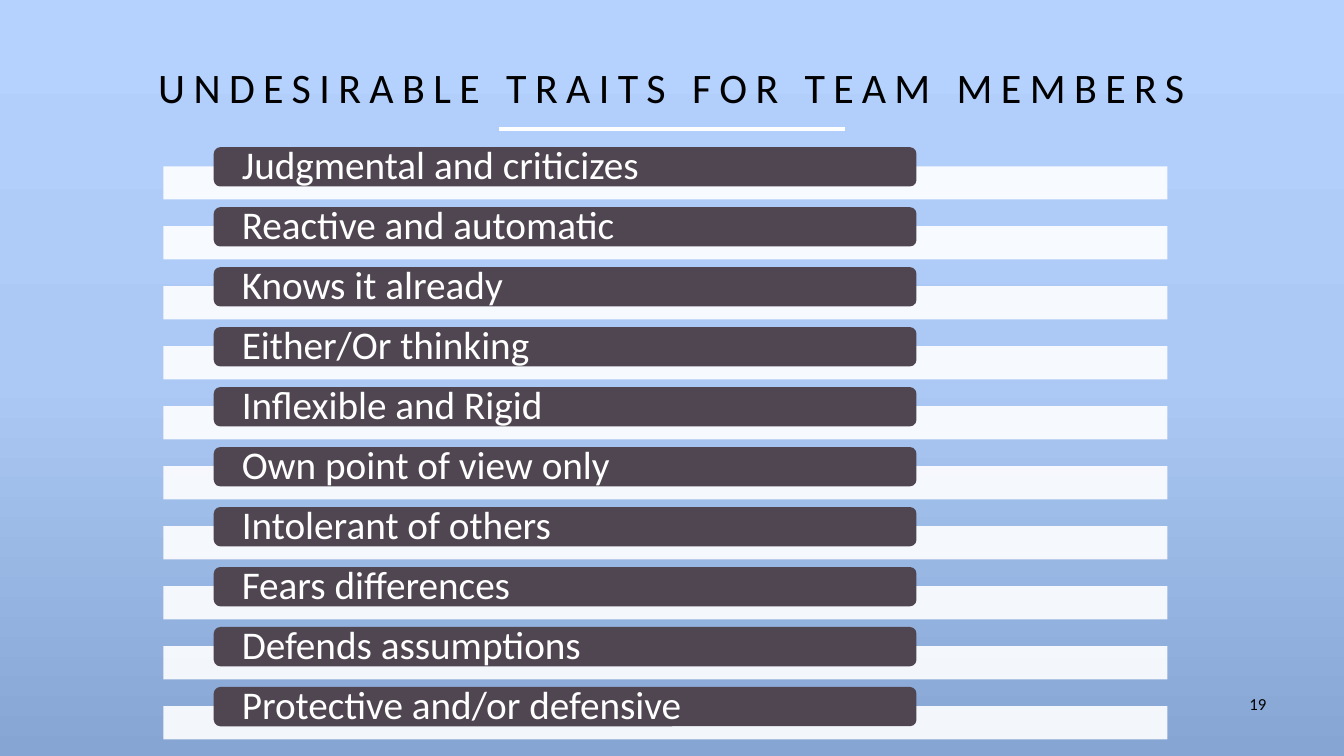
from copy import deepcopy

from pptx import Presentation
from pptx.dml.color import RGBColor
from pptx.enum.shapes import MSO_CONNECTOR, MSO_SHAPE
from pptx.enum.text import MSO_ANCHOR, MSO_AUTO_SIZE, PP_ALIGN
from pptx.oxml.ns import qn
from pptx.oxml.xmlchemy import OxmlElement
from pptx.util import Inches, Pt

THEME = {
    "font": "Calibri",
    "black": RGBColor.from_string("000000"),
    "white": RGBColor.from_string("FFFFFF"),
    "plum": RGBColor.from_string("504652"),
    "sky": [(0, "B5D1FD"), (0.5, "ACC9F5"), (1, "86A5D2")],
    "title_size": Pt(30),
    "trait_size": Pt(28),
    "number_size": Pt(12),
}

TRAITS = [
    "Judgmental and criticizes",
    "Reactive and automatic",
    "Knows it already",
    "Either/Or thinking",
    "Inflexible and Rigid",
    "Own point of view only",
    "Intolerant of others",
    "Fears differences",
    "Defends assumptions",
    "Protective and/or defensive",
]
FIRST_TOP, ROW_STEP = 1.46, 0.595


def write_text(shape, text, size, color, align, margins, line_spacing=1.0,
               anchor=MSO_ANCHOR.MIDDLE):
    frame = shape.text_frame
    side, edge = (Inches(margin) for margin in margins)
    frame_format = {
        "word_wrap": True, "auto_size": MSO_AUTO_SIZE.NONE, "vertical_anchor": anchor,
        "margin_left": side, "margin_right": side,
        "margin_top": edge, "margin_bottom": edge,
    }
    for name, value in frame_format.items():
        setattr(frame, name, value)
    paragraph = frame.paragraphs[0]
    paragraph.alignment = align
    paragraph.line_spacing = line_spacing
    run = paragraph.add_run()
    run.text = text
    for name, value in {"name": THEME["font"], "size": size}.items():
        setattr(run.font, name, value)
    run.font.color.rgb = color
    return run


def add_bar(slide, kind, left, top, width, height, color):
    shape = slide.shapes.add_shape(
        kind, Inches(left), Inches(top), Inches(width), Inches(height))
    shape.shadow.inherit = False
    shape.fill.solid()
    shape.fill.fore_color.rgb = color
    shape.line.fill.background()
    return shape


presentation = Presentation()
presentation.slide_width = Inches(13.33)
presentation.slide_height = Inches(7.5)
slide = presentation.slides.add_slide(presentation.slide_layouts[5])

# Background: three-stop gradient from top to bottom
background = slide.background.fill
background.gradient()
background.gradient_angle = 270
stop_list = slide.element.find(".//" + qn("a:gsLst"))
stop_list.append(deepcopy(stop_list[-1]))
for stop, (position, color) in zip(background.gradient_stops, THEME["sky"]):
    stop.position = position
    stop.color.rgb = RGBColor.from_string(color)

# Title and the rule below it
title = slide.shapes.title
title_place = {"left": 0, "top": 0.53, "width": 13.33, "height": 0.73}
for name, value in title_place.items():
    setattr(title, name, Inches(value))
title_run = write_text(title, "UNDESIRABLE TRAITS FOR TEAM MEMBERS", THEME["title_size"],
                       THEME["black"], PP_ALIGN.CENTER, (0.1, 0.05), 0.9)
title_run.font.element.set("spc", "600") if hasattr(title_run.font, "element") else \
    title_run._r.get_or_add_rPr().set("spc", "600")

rule = slide.shapes.add_connector(
    MSO_CONNECTOR.STRAIGHT, Inches(4.95), Inches(1.28), Inches(8.38), Inches(1.28))
rule.line.color.rgb = THEME["white"]
rule.line.width = Pt(3)
rule.element.spPr.append(OxmlElement("a:effectLst"))

# Traits: a white band behind each rounded label
for row, trait in enumerate(TRAITS):
    top = FIRST_TOP + row * ROW_STEP
    band = add_bar(slide, MSO_SHAPE.RECTANGLE, 1.62, top + 0.19, 9.96, 0.33, THEME["white"])
    alpha = OxmlElement("a:alpha")
    alpha.set("val", "90000")
    band.element.spPr.find(".//" + qn("a:srgbClr")).append(alpha)
    label = add_bar(slide, MSO_SHAPE.ROUNDED_RECTANGLE, 2.12, top, 6.97, 0.39, THEME["plum"])
    write_text(label, trait, THEME["trait_size"], THEME["white"], PP_ALIGN.LEFT,
               (0.26, 0), 0.9)

# Slide number
number = slide.shapes.add_textbox(Inches(9.56), Inches(6.83), Inches(3.11), Inches(0.52))
write_text(number, "19", THEME["number_size"], THEME["black"], PP_ALIGN.RIGHT,
           (0.11, 0.05), anchor=MSO_ANCHOR.TOP)

presentation.save("out.pptx")
